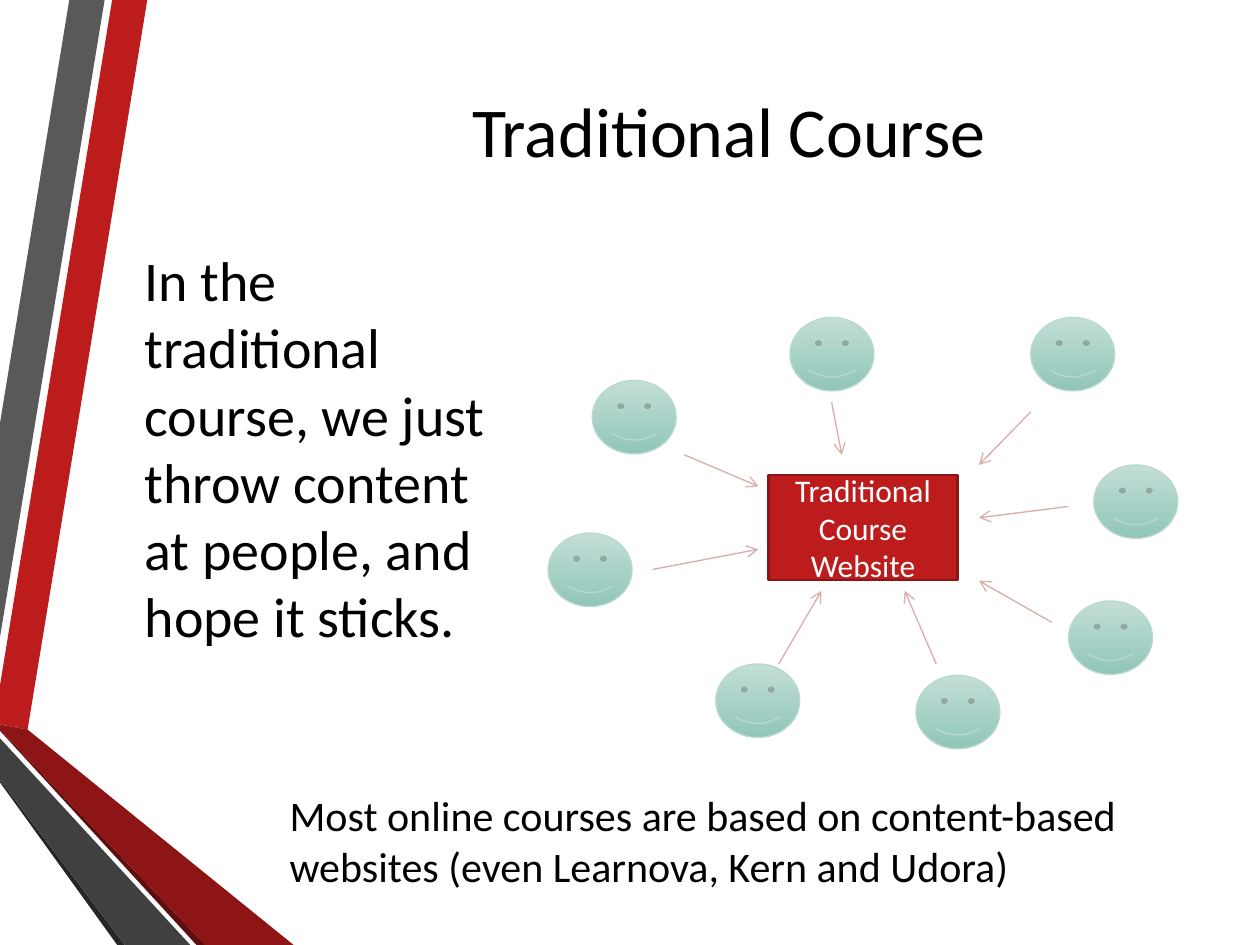
from lxml import etree
from pptx import Presentation
from pptx.dml import color
from pptx.enum import shapes, text
from pptx.oxml import ns
from pptx.util import Pt


def rgb(value):
    return color.RGBColor.from_string(value)


def style_paragraph(paragraph, size, hue="000000"):
    paragraph.font.name = "Calibri"
    paragraph.font.size = Pt(size)
    paragraph.font.color.rgb = rgb(hue)


deck = Presentation()
deck.slide_width, deck.slide_height = Pt(720), Pt(540)
slide = deck.slides.add_slide(deck.slide_layouts[5])

ribbons = [
    ("BC1C1C", [(0, 391.7), (0, 414), (15.8, 416.9), (84.2, 0), (64.1, 0)]),
    ("595959", [(59.8, 0), (39.6, 0), (0, 241.9), (0, 364.3)]),
    ("262626", [(0, 445.7), (0, 447.1), (67, 540), (71.3, 540)]),
    ("5E0E0E", [(0, 416.9), (0, 417.6), (112.3, 540), (117.4, 540)]),
    ("8D1515", [(0, 416.9), (117.4, 540), (167.8, 540), (15.8, 416.9), (0, 414)]),
    ("404040", [(0, 445.7), (71.3, 540), (108.7, 540), (0, 421.9)]),
]
for hue, corners in ribbons:
    start, *rest = [(Pt(x), Pt(y)) for x, y in corners]
    outline = slide.shapes.build_freeform(*start, scale=1.0)
    outline.add_line_segments(rest, close=True)
    ribbon = outline.convert_to_shape()
    ribbon.shadow.inherit = False
    ribbon.fill.solid()
    ribbon.fill.fore_color.rgb = rgb(hue)
    ribbon.line.fill.background()

title = slide.shapes.title
title.left, title.top, title.width, title.height = Pt(113), Pt(-4.3), Pt(607), Pt(156.2)
title.text_frame.text = "Traditional Course"
title.text_frame.vertical_anchor = text.MSO_ANCHOR.MIDDLE
title.text_frame.paragraphs[0].alignment = text.PP_ALIGN.CENTER
style_paragraph(title.text_frame.paragraphs[0], 40)

statements = [
    ("In the traditional course, we just throw content at people, and hope it sticks.",
     32, text.MSO_ANCHOR.MIDDLE, (75.6, 85, 225.4, 341.3)),
    ("Most online courses are based on content-based websites (even Learnova, Kern and Udora)",
     24, text.MSO_ANCHOR.TOP, (158.4, 447.8, 542.9, 65.5)),
]
for wording, size, anchor, place in statements:
    statement = slide.shapes.add_textbox(*map(Pt, place)).text_frame
    statement.word_wrap = True
    statement.vertical_anchor = anchor
    statement.text = wording
    style_paragraph(statement.paragraphs[0], size)

website = slide.shapes.add_shape(
    shapes.MSO_SHAPE.RECTANGLE, Pt(439.2), Pt(271.4), Pt(108), Pt(60))
website.shadow.inherit = False
website.fill.solid()
website.fill.fore_color.rgb = rgb("BC1C1C")
website.line.color.rgb = rgb("8B1515")
website.line.width = Pt(1.25)
website.text_frame.word_wrap = True
website.text_frame.vertical_anchor = text.MSO_ANCHOR.MIDDLE
website.text_frame.text = "Traditional\nCourse\nWebsite"
for paragraph in website.text_frame.paragraphs:
    paragraph.alignment = text.PP_ALIGN.CENTER
    style_paragraph(paragraph, 18, "FFFFFF")

learners = [
    (625, 265.7), (610.6, 343.4), (589, 181.4), (523.4, 385.9),
    (409, 379.4), (313.2, 304.6), (338.4, 217.4), (451.4, 181.4),
]
for left, top in learners:
    learner = slide.shapes.add_shape(
        shapes.MSO_SHAPE.SMILEY_FACE, Pt(left), Pt(top), Pt(48), Pt(42))
    learner.shadow.inherit = False
    learner.fill.gradient()
    learner.fill.gradient_angle = 270
    for stop, position, hue in zip(learner.fill.gradient_stops, (0, 1), ("C3DED7", "90C6B8")):
        stop.position = position
        stop.color.rgb = rgb(hue)
    learner.line.color.rgb = rgb("B9D9D0")
    learner.line.width = Pt(0.75)

visits = [
    (589, 235.4, 559.4, 265.7), (610.6, 289.4, 559.4, 295.9),
    (601.2, 355.7, 559.4, 331.9), (535, 379.4, 517, 337.7),
    (475.2, 229.7, 481, 259.9), (391, 259.9, 433.4, 277.9),
    (373, 325.4, 433.4, 313.9), (445, 379.4, 469.4, 337.7),
]
for ends in visits:
    visit = slide.shapes.add_connector(shapes.MSO_CONNECTOR.STRAIGHT, *map(Pt, ends))
    visit.line.color.rgb = rgb("DAACAC")
    visit.line.width = Pt(0.75)
    etree.SubElement(visit.line._get_or_add_ln(), ns.qn("a:tailEnd"), type="arrow")
    etree.SubElement(visit._element.spPr, ns.qn("a:effectLst"))

deck.save("out.pptx")
